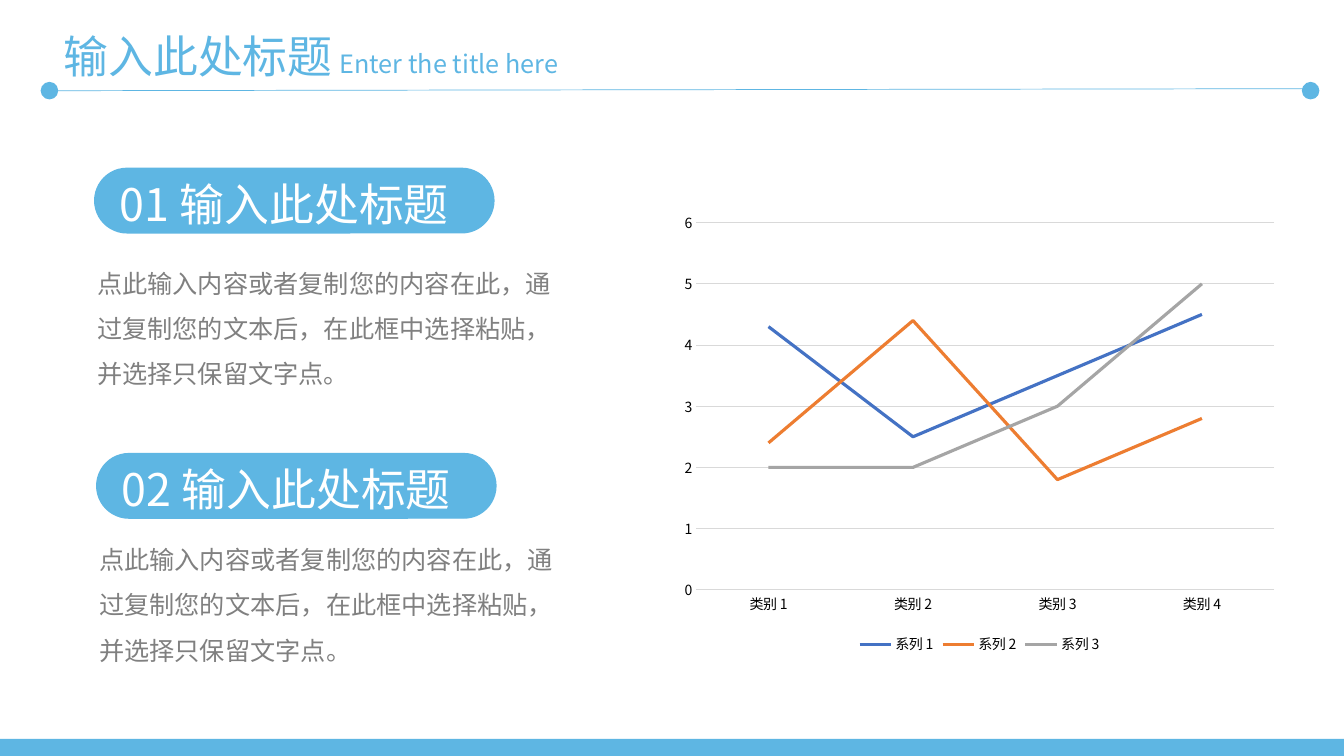
from lxml import etree
from pptx import Presentation
from pptx.chart.data import CategoryChartData
from pptx.dml.color import RGBColor
from pptx.enum.chart import XL_CHART_TYPE as ChartType, XL_LEGEND_POSITION as LegendPosition
from pptx.enum.chart import XL_MARKER_STYLE as Marker, XL_TICK_MARK as Tick
from pptx.enum.shapes import MSO_CONNECTOR as Connector, MSO_SHAPE as Shape
from pptx.enum.text import MSO_ANCHOR as Anchor, MSO_AUTO_SIZE as AutoSize, PP_ALIGN as Align
from pptx.oxml.ns import qn
from pptx.util import Inches, Pt

WIDTH, HEIGHT = Inches(13.33), Inches(7.5)
FONT = "Noto Sans CJK SC"
COLORS = {"accent": "5EB6E3", "body": "808080", "white": "FFFFFF", "black": "000000",
          "grid": "D9D9D9", "blue": "4472C4", "orange": "ED7D31", "gray": "A5A5A5"}
HEADING = "输入此处标题"
BODY = "点此输入内容或者复制您的内容在此，通过复制您的文本后，在此框中选择粘贴，并选择只保留文字点。"

# Places are percentages of the slide: pill left, pill top, body top
SECTIONS = [("01", 7.05, 22.27, 32.8), ("02", 7.2, 60, 69.33)]
CATEGORIES = [f"类别 {number}" for number in range(1, 5)]
SERIES = [("系列 1", "blue", (4.3, 2.5, 3.5, 4.5)),
          ("系列 2", "orange", (2.4, 4.4, 1.8, 2.8)),
          ("系列 3", "gray", (2, 2, 3, 5))]


def color(name):
    return RGBColor.from_string(COLORS[name])


def place(left, top, width, height):
    """Turn percentages of the slide into lengths."""
    return (int(WIDTH * left / 100), int(HEIGHT * top / 100),
            int(WIDTH * width / 100), int(HEIGHT * height / 100))


def apply(target, values):
    for name, value in values.items():
        setattr(target, name, value)


def format_font(font, size, color_name):
    apply(font, {"name": FONT, "size": Pt(size)})
    font.color.rgb = color(color_name)


def format_line(line, color_name, width):
    line.color.rgb = color(color_name)
    line.width = Pt(width)


def write(shape, text, size, color_name, spacing=None):
    frame = shape.text_frame
    apply(frame, {"word_wrap": True, "auto_size": AutoSize.SHAPE_TO_FIT_TEXT,
                  "vertical_anchor": Anchor.TOP})
    paragraph = frame.paragraphs[0]
    apply(paragraph, {"alignment": Align.LEFT, "line_spacing": spacing})
    run = paragraph.add_run()
    run.text = text
    format_font(run.font, size, color_name)
    etree.SubElement(run.font._element, qn("a:ea"), typeface=FONT)


def add_text(slide, box, *content):
    write(slide.shapes.add_textbox(*place(*box)), *content)


def add_filled(slide, kind, box, outlined=True):
    shape = slide.shapes.add_shape(kind, *place(*box))
    shape.shadow.inherit = False
    shape.fill.solid()
    shape.fill.fore_color.rgb = color("accent")
    if outlined:
        format_line(shape.line, "accent", 1)
    else:
        shape.line.fill.background()
    return shape


def add_header(slide):
    title = slide.shapes.title
    box = place(3.98, 3.07, 22.88, 8.53)
    apply(title, dict(zip(("left", "top", "width", "height"), box)))
    write(title, HEADING, 32, "accent")
    add_text(slide, (24.53, 5.73, 19.35, 5.33), "Enter the title here", 18, "accent")

    start_x, start_y, end_x, end_y = place(98.12, 11.73, 3.98, 12)
    rule = slide.shapes.add_connector(Connector.STRAIGHT, start_x, start_y, end_x, end_y)
    format_line(rule.line, "accent", 0.5)
    etree.SubElement(rule._element.spPr, qn("a:effectLst"))
    for left in (3.08, 96.92):
        add_filled(slide, Shape.OVAL, (left, 10.93, 1.2, 2.13))


def add_section(slide, number, left, top, body_top):
    pill = add_filled(slide, Shape.ROUNDED_RECTANGLE, (left, top, 29.7, 8.53))
    pill.adjustments[0] = 0.5
    add_text(slide, (left + 1.13, top + 0.47, 28.28, 8.53), f"{number} {HEADING}", 32, "white")
    add_text(slide, (left - 0.56, body_top, 35.7, 19.47), BODY, 18, "body", 1.5)


def add_line_chart(slide):
    data = CategoryChartData()
    data.categories = CATEGORIES
    for name, _, values in SERIES:
        data.add_series(name, values)
    box = place(50.03, 26.93, 45.69, 60.13)
    chart = slide.shapes.add_chart(ChartType.LINE, *box, data).chart
    apply(chart, {"has_title": False, "has_legend": True})
    apply(chart.legend, {"position": LegendPosition.BOTTOM, "include_in_layout": False})
    format_font(chart.font, 10, "black")
    etree.SubElement(chart.font._element, qn("a:ea"), typeface=FONT)

    plot = chart.plots[0]
    plot.vary_by_categories = False
    for series, (_, color_name, _) in zip(plot.series, SERIES):
        series.smooth = False
        series.marker.style = Marker.NONE
        format_line(series.format.line, color_name, 2.25)

    ticks = {"major_tick_mark": Tick.NONE, "minor_tick_mark": Tick.NONE}
    apply(chart.category_axis, ticks)
    format_line(chart.category_axis.format.line, "grid", 0.75)
    value_axis = chart.value_axis
    apply(value_axis, {**ticks, "minimum_scale": 0, "maximum_scale": 6, "major_unit": 1,
                       "has_major_gridlines": True})
    value_axis.format.line.fill.background()
    format_line(value_axis.major_gridlines.format.line, "grid", 0.75)


def main():
    presentation = Presentation()
    apply(presentation, {"slide_width": WIDTH, "slide_height": HEIGHT})
    slide = presentation.slides.add_slide(presentation.slide_layouts.get_by_name("Title Only"))
    add_filled(slide, Shape.RECTANGLE, (0, 97.73, 100, 2.53), outlined=False)
    add_line_chart(slide)
    for section in SECTIONS:
        add_section(slide, *section)
    add_header(slide)
    presentation.save("out.pptx")


if __name__ == "__main__":
    main()
